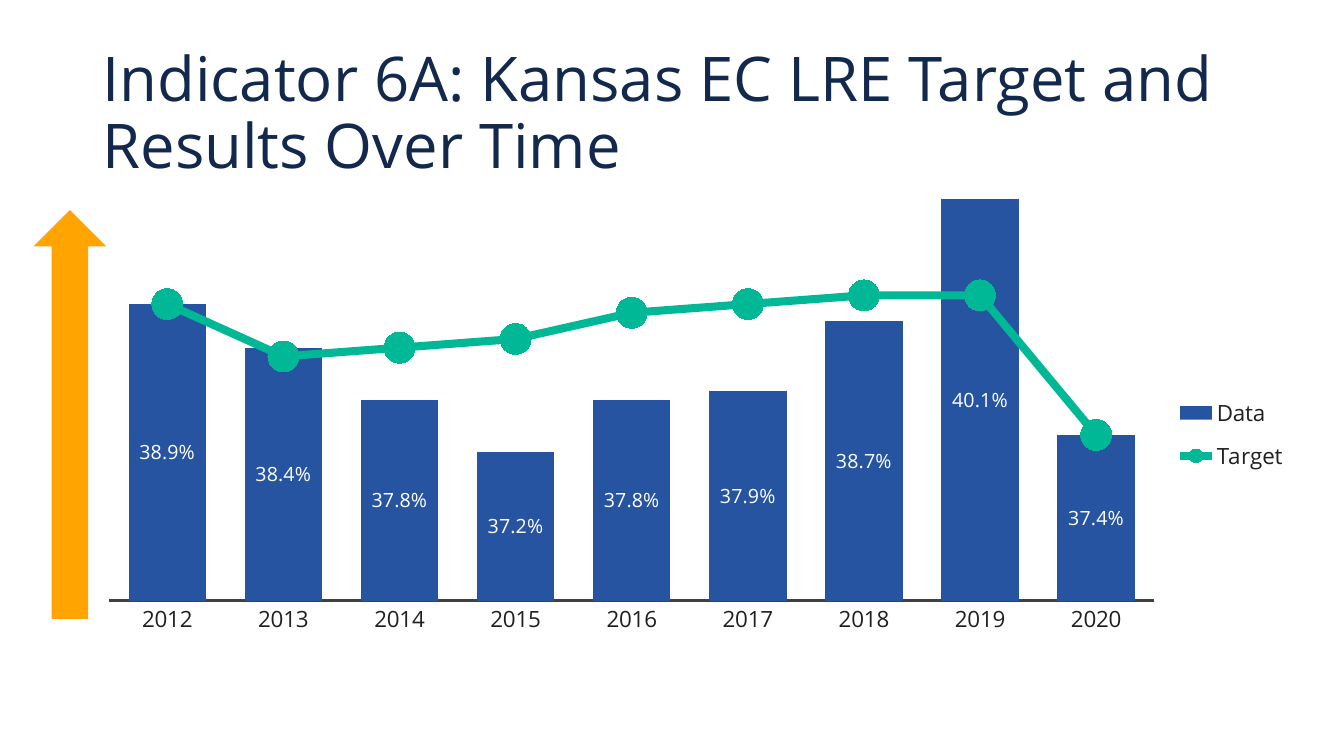
from dataclasses import dataclass

from lxml import etree
from pptx import Presentation
from pptx.chart.data import CategoryChartData
from pptx.dml.color import RGBColor
from pptx.enum import chart as chart_enum, shapes, text
from pptx.oxml.ns import qn
from pptx.util import Length, Pt

NAVY = RGBColor(0x12, 0x28, 0x4C)
BLUE = RGBColor(0x26, 0x54, 0xA0)
GREEN = RGBColor(0x00, 0xB7, 0x96)
ORANGE = RGBColor(0xFF, 0xA4, 0x00)
INK = RGBColor(0x1F, 0x20, 0x22)
AXIS_GRAY = RGBColor(0x3E, 0x40, 0x43)
WHITE = RGBColor(0xFF, 0xFF, 0xFF)
FONT = "Open Sans"
PERCENT = "0.0%"


@dataclass
class Box:
    left: float
    top: float
    width: float
    height: float

    def lengths(self) -> tuple[Length, ...]:
        return Pt(self.left), Pt(self.top), Pt(self.width), Pt(self.height)


@dataclass
class YearlySeries:
    name: str
    percents: tuple[float, ...]


YEARS = [str(year) for year in range(2012, 2021)]
SERIES = (
    YearlySeries("Data", (38.9, 38.4, 37.8, 37.2, 37.8, 37.9, 38.7, 40.1, 37.4)),
    YearlySeries("Target", (38.9, 38.3, 38.4, 38.5, 38.8, 38.9, 39.0, 39.0, 37.4)),
)
TITLE_BOX = Box(66, 30, 828, 104.5)
CHART_BOX = Box(66, 117.5, 861, 357)
ARROW_BOX = Box(24, 150, 52, 292)
# Shares of the chart's width and height
PLOT_AREA = Box(0.014, 0, 0.867, 0.873)
LEGEND_AREA = Box(0.89, 0.44, 0.11, 0.2)


def style_font(font, size: float, color: RGBColor) -> None:
    font.name = FONT
    font.size = Pt(size)
    font.color.rgb = color


def make_layout(area: Box, inner: bool):
    layout = etree.Element(qn("c:layout"))
    manual = etree.SubElement(layout, qn("c:manualLayout"))
    settings = [("layoutTarget", "inner")] if inner else []
    settings += [("xMode", "edge"), ("yMode", "edge"), ("x", area.left),
                 ("y", area.top), ("w", area.width), ("h", area.height)]
    for tag, value in settings:
        etree.SubElement(manual, qn(f"c:{tag}")).set("val", str(value))
    return layout


def place_part(part, area: Box, index: int, inner: bool = False) -> None:
    for old_layout in part.findall(qn("c:layout")):
        part.remove(old_layout)
    part.insert(index, make_layout(area, inner))


def move_last_series_to_line(chart) -> None:
    """Turn the last column series into a line on the same axes."""
    bar_chart = chart.plots[0]._element
    series = bar_chart.findall(qn("c:ser"))[-1]
    for element in series.findall(qn("c:invertIfNegative")):
        series.remove(element)
    line_chart = etree.Element(qn("c:lineChart"))
    etree.SubElement(line_chart, qn("c:grouping")).set("val", "standard")
    etree.SubElement(line_chart, qn("c:varyColors")).set("val", "0")
    line_chart.append(series)
    etree.SubElement(line_chart, qn("c:marker")).set("val", "1")
    for axis in bar_chart.findall(qn("c:axId")):
        etree.SubElement(line_chart, qn("c:axId")).set("val", axis.get("val"))
    bar_chart.addnext(line_chart)


def format_axes(chart) -> None:
    years = chart.category_axis
    years.major_tick_mark = chart_enum.XL_TICK_MARK.NONE
    years.has_major_gridlines = False
    years.format.line.color.rgb = AXIS_GRAY
    years.format.line.width = Pt(2)
    style_font(years.tick_labels.font, 16, INK)

    values = chart.value_axis
    values.minimum_scale, values.maximum_scale = 0.355, 0.405
    values.has_major_gridlines = False
    values.major_tick_mark = chart_enum.XL_TICK_MARK.NONE
    values.tick_label_position = chart_enum.XL_TICK_LABEL_POSITION.NONE
    values.format.line.fill.background()


def format_columns(plot) -> None:
    plot.gap_width = 50
    plot.overlap = 6
    plot.vary_by_categories = False
    columns = plot.series[0]
    columns.format.fill.solid()
    columns.format.fill.fore_color.rgb = BLUE
    labels = columns.data_labels
    labels.show_value = True
    labels.number_format = PERCENT
    labels.number_format_is_linked = False
    labels.position = chart_enum.XL_LABEL_POSITION.CENTER
    style_font(labels.font, 14, WHITE)


def format_target(target) -> None:
    target.smooth = False
    target.format.line.color.rgb = GREEN
    target.format.line.width = Pt(5.75)
    target.marker.style = chart_enum.XL_MARKER_STYLE.CIRCLE
    target.marker.size = 22
    target.marker.format.fill.solid()
    target.marker.format.fill.fore_color.rgb = GREEN
    target.marker.format.line.color.rgb = GREEN


def add_results_chart(slide) -> None:
    data = CategoryChartData(number_format=PERCENT)
    data.categories = YEARS
    for series in SERIES:
        data.add_series(series.name, [round(value / 100, 3) for value in series.percents])
    chart = slide.shapes.add_chart(
        chart_enum.XL_CHART_TYPE.COLUMN_CLUSTERED, *CHART_BOX.lengths(), data).chart
    chart.has_title = False
    style_font(chart.font, 10, NAVY)
    move_last_series_to_line(chart)
    format_columns(chart.plots[0])
    format_target(chart.plots[1].series[0])
    format_axes(chart)

    chart.has_legend = True
    legend = chart.legend
    legend.position = chart_enum.XL_LEGEND_POSITION.RIGHT
    legend.include_in_layout = False
    style_font(legend.font, 16, INK)
    place_part(legend._element, LEGEND_AREA, 1)
    place_part(chart.plots[0]._element.getparent(), PLOT_AREA, 0, inner=True)


def set_title(slide, wording: str) -> None:
    title = slide.shapes.title
    title.left, title.top, title.width, title.height = TITLE_BOX.lengths()
    title.text_frame.word_wrap = True
    title.text_frame.vertical_anchor = text.MSO_ANCHOR.MIDDLE
    paragraph = title.text_frame.paragraphs[0]
    paragraph.alignment = text.PP_ALIGN.LEFT
    paragraph.line_spacing = 0.9
    run = paragraph.add_run()
    run.text = wording
    style_font(run.font, 44, NAVY)


def add_up_arrow(slide) -> None:
    arrow = slide.shapes.add_shape(shapes.MSO_SHAPE.UP_ARROW, *ARROW_BOX.lengths())
    arrow.shadow.inherit = False
    arrow.fill.solid()
    arrow.fill.fore_color.rgb = ORANGE
    arrow.line.fill.background()


def main() -> None:
    presentation = Presentation()
    presentation.slide_width, presentation.slide_height = Pt(960), Pt(540)
    slide = presentation.slides.add_slide(presentation.slide_layouts[5])
    set_title(slide, "Indicator 6A: Kansas EC LRE Target and Results Over Time")
    add_results_chart(slide)
    add_up_arrow(slide)
    presentation.save("out.pptx")


if __name__ == "__main__":
    main()
